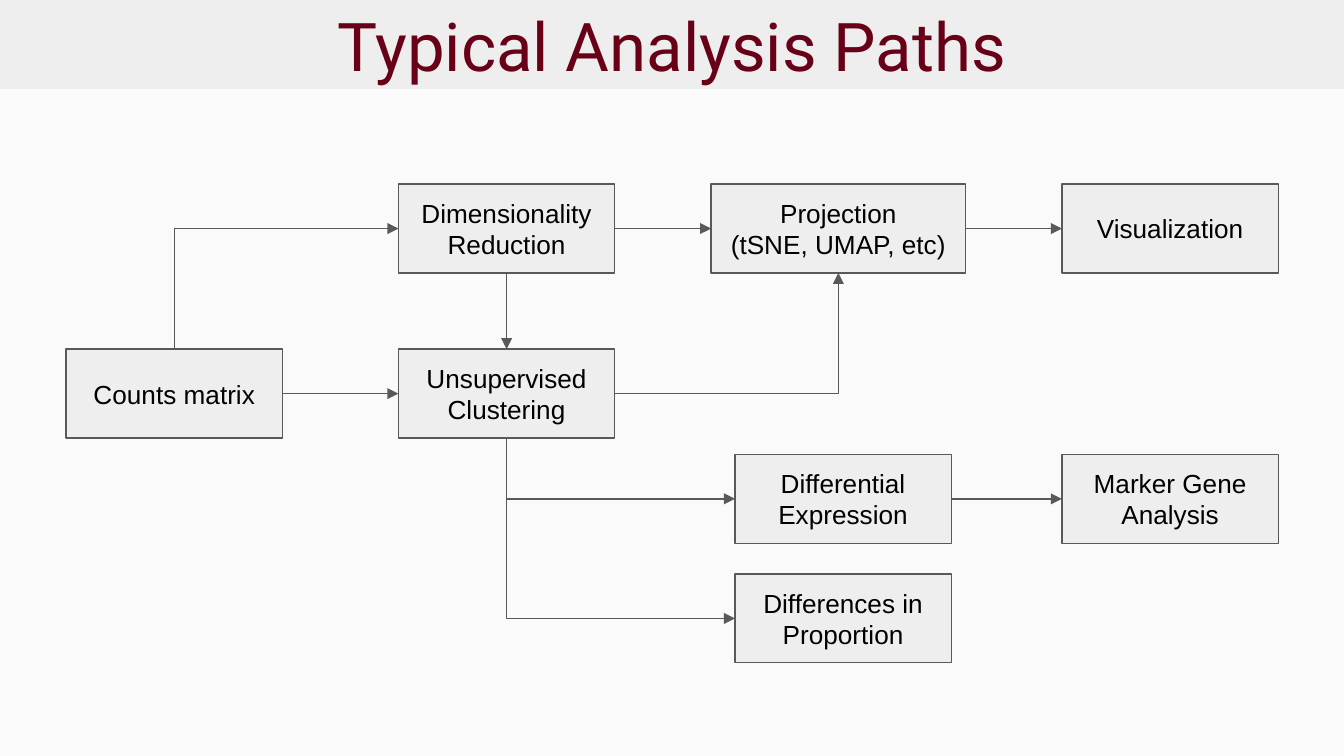
from dataclasses import dataclass

import pptx
import pptx.dml.color
import pptx.enum.shapes
import pptx.enum.text
import pptx.oxml
import pptx.oxml.ns
import pptx.util

Cm = pptx.util.Cm
Pt = pptx.util.Pt
qn = pptx.oxml.ns.qn
CONNECTOR = pptx.enum.shapes.MSO_CONNECTOR
TOP, LEFT, BOTTOM, RIGHT = range(4)


@dataclass(frozen=True)
class Theme:
    background: str = "FAFAFA"
    panel: str = "EEEEEE"
    outline: str = "595959"
    heading: str = "680018"
    body: str = "000000"
    heading_font: str = "Roboto"
    body_font: str = "Arial"
    heading_size: float = 36
    body_size: float = 14
    line_width: float = 0.75


THEME = Theme()

# Flow chart grid, in centimetres
STEP_WIDTH, STEP_HEIGHT = 4.09, 1.68
START_X, METHOD_X, RESULT_X, FINAL_X = 1.25, 7.53, 13.89, 20.07
PROJECTION_X, PROJECTION_WIDTH = 13.44, 4.81
UPPER_Y, MIDDLE_Y, LOWER_Y, BOTTOM_Y = 3.48, 6.6, 8.59, 10.85


def rgb(code):
    return pptx.dml.color.RGBColor.from_string(code)


def write_text(shape, text, *, font=THEME.body_font, size=THEME.body_size,
               color=THEME.body):
    frame = shape.text_frame
    frame.word_wrap = True
    frame.vertical_anchor = pptx.enum.text.MSO_ANCHOR.MIDDLE
    frame.margin_left = frame.margin_right = Cm(0.25)
    frame.margin_top = frame.margin_bottom = Cm(0.25)
    paragraph = frame.paragraphs[0]
    paragraph.text = text
    paragraph.alignment = pptx.enum.text.PP_ALIGN.CENTER
    for run in paragraph.runs:
        run.font.name = font
        run.font.size = Pt(size)
        run.font.color.rgb = rgb(color)


def add_panel(slide, x, y, width, height):
    panel = slide.shapes.add_shape(
        pptx.enum.shapes.MSO_SHAPE.RECTANGLE,
        Cm(x), Cm(y), Cm(width), Cm(height))
    panel.shadow.inherit = False
    panel.fill.solid()
    panel.fill.fore_color.rgb = rgb(THEME.panel)
    panel.line.fill.background()
    return panel


def style_line(line):
    line.color.rgb = rgb(THEME.outline)
    line.width = Pt(THEME.line_width)


def add_step(slide, text, x, y, width=STEP_WIDTH):
    step = add_panel(slide, x, y, width, STEP_HEIGHT)
    style_line(step.line)
    write_text(step, text)
    return step


def add_arrow(slide, source, source_side, target, target_side,
              kind=CONNECTOR.STRAIGHT):
    arrow = slide.shapes.add_connector(kind, 0, 0, 0, 0)
    arrow.begin_connect(source, source_side)
    arrow.end_connect(target, target_side)
    style_line(arrow.line)
    properties = arrow._element.spPr
    pptx.oxml.ns  # namespace helpers serve the arrowhead below
    head = arrow.line._get_or_add_ln().makeelement(
        qn("a:tailEnd"), {"type": "triangle"})
    properties.find(qn("a:ln")).append(head)
    properties.append(properties.makeelement(qn("a:effectLst"), {}))
    return arrow


def add_corner_arrow(slide, source, source_side, target, target_side):
    """Arrow with a single right-angled turn, heading right overall."""
    arrow = add_arrow(slide, source, source_side, target, target_side,
                      CONNECTOR.ELBOW)
    properties = arrow._element.spPr
    properties.find(qn("a:prstGeom")).set("prst", "bentConnector2")
    if source_side in (TOP, BOTTOM):
        # The preset leaves sideways, so turn it to leave vertically
        center_x = (arrow.begin_x + arrow.end_x) // 2
        center_y = (arrow.begin_y + arrow.end_y) // 2
        width, height = arrow.height, arrow.width
        arrow.left, arrow.top = center_x - width // 2, center_y - height // 2
        arrow.width, arrow.height = width, height
        frame = properties.find(qn("a:xfrm"))
        frame.set("rot", str(270 * 60000))
        frame.set("flipH", "1" if source_side == BOTTOM else "0")
        frame.set("flipV", "0")


def main():
    deck = pptx.Presentation()
    deck.slide_width, deck.slide_height = Cm(25.4), Cm(14.29)
    slide = deck.slides.add_slide(deck.slide_layouts[6])
    slide.background.fill.solid()
    slide.background.fill.fore_color.rgb = rgb(THEME.background)

    # Title band
    title = add_panel(slide, 0, 0, 25.4, STEP_HEIGHT)
    write_text(title, "Typical Analysis Paths", font=THEME.heading_font,
               size=THEME.heading_size, color=THEME.heading)

    # Analysis steps
    counts = add_step(slide, "Counts matrix", START_X, MIDDLE_Y)
    reduction = add_step(slide, "Dimensionality Reduction", METHOD_X, UPPER_Y)
    clustering = add_step(slide, "Unsupervised Clustering", METHOD_X, MIDDLE_Y)
    projection = add_step(slide, "Projection\n(tSNE, UMAP, etc)",
                          PROJECTION_X, UPPER_Y, PROJECTION_WIDTH)
    visualization = add_step(slide, "Visualization", FINAL_X, UPPER_Y)
    expression = add_step(slide, "Differential Expression", RESULT_X, LOWER_Y)
    markers = add_step(slide, "Marker Gene Analysis", FINAL_X, LOWER_Y)
    proportion = add_step(slide, "Differences in Proportion",
                          RESULT_X, BOTTOM_Y)

    # Straight paths
    for source, target in ((counts, clustering), (reduction, projection),
                           (projection, visualization),
                           (expression, markers)):
        add_arrow(slide, source, RIGHT, target, LEFT)
    add_arrow(slide, reduction, BOTTOM, clustering, TOP)

    # Paths that turn a corner
    add_corner_arrow(slide, counts, TOP, reduction, LEFT)
    add_corner_arrow(slide, clustering, RIGHT, projection, BOTTOM)
    for target in (expression, proportion):
        add_corner_arrow(slide, clustering, BOTTOM, target, LEFT)

    deck.save("out.pptx")


if __name__ == "__main__":
    main()
